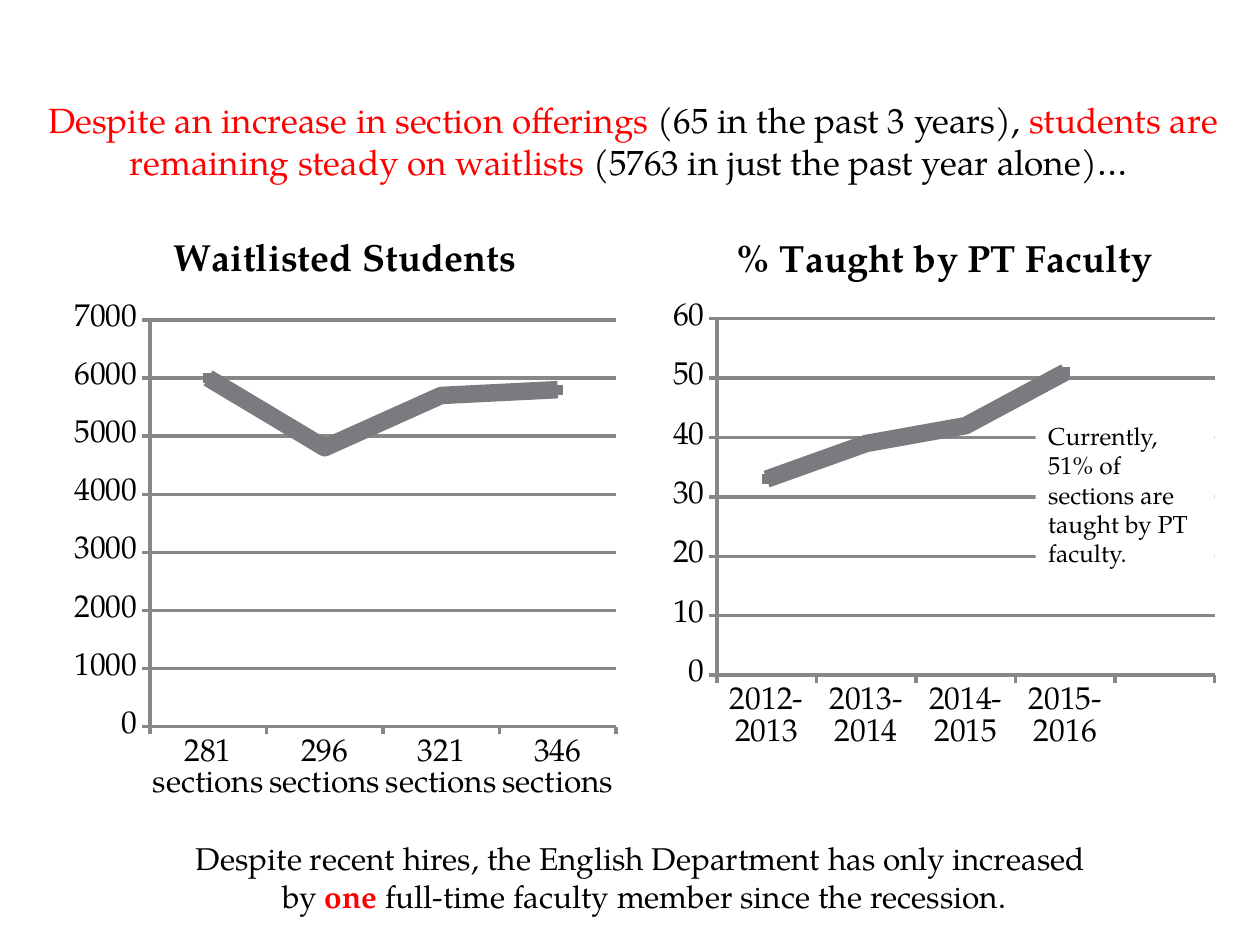
from pptx import Presentation
from pptx.chart.data import CategoryChartData
from pptx.dml.color import RGBColor
from pptx.enum.chart import XL_CHART_TYPE, XL_TICK_MARK
from pptx.enum.shapes import MSO_SHAPE
from pptx.enum.text import MSO_ANCHOR, PP_ALIGN
from pptx.oxml import parse_xml
from pptx.oxml.ns import nsdecls
from pptx.util import Inches, Pt

LINE = XL_CHART_TYPE.LINE
OUTSIDE = XL_TICK_MARK.OUTSIDE
RECT = MSO_SHAPE.RECTANGLE
TOP, BOTTOM = MSO_ANCHOR.TOP, MSO_ANCHOR.BOTTOM
LEFT, CENTER = PP_ALIGN.LEFT, PP_ALIGN.CENTER

BLACK = RGBColor(0x00, 0x00, 0x00)
RED = RGBColor(0xFF, 0x00, 0x00)
WHITE = RGBColor(0xFF, 0xFF, 0xFF)
GRAY = RGBColor(0x79, 0x7B, 0x7E)
GRID = RGBColor(0x87, 0x87, 0x87)
FONT = "TeX Gyre Pagella"

prs = Presentation()
prs.slide_width, prs.slide_height = Inches(10), Inches(7.5)
s = prs.slides.add_slide(prs.slide_layouts[6])


def write(sp, paragraphs, size, align, anchor=TOP):
    """Fill a shape with paragraphs of (text, colour, bold) runs."""
    tf = sp.text_frame
    tf.word_wrap = True
    tf.vertical_anchor = anchor
    for i, runs in enumerate(paragraphs):
        p = tf.paragraphs[0] if i == 0 else tf.add_paragraph()
        p.alignment = align
        p.font.name, p.font.size = FONT, Pt(size)
        for text, color, bold in runs:
            r = p.add_run()
            r.text = text
            r.font.color.rgb = color
            r.font.bold = bold


# Headline
sp = s.shapes.add_textbox(Inches(0.19), Inches(0.1), Inches(9.67), Inches(1.4))
write(sp, [[("Despite an increase in section offerings", RED, False),
            (" (65 in the past 3 years), ", BLACK, False),
            ("students are remaining steady on waitlists", RED, False),
            (" (5763 in just the past year alone)… ", BLACK, False)]],
      20, CENTER, BOTTOM)

# Line charts: title, categories, values, axis maximum and step,
# chart box and plot area (left, top, width, height in inches)
charts = [
    ("Waitlisted Students",
     ["281 sections", "296 sections", "321 sections", "346 sections"],
     [6000, 4800, 5700, 5800], 7000, 1000,
     (0.5, 1.7, 4.48, 4.77), (1.19, 2.54, 3.7, 3.23)),
    ("% Taught by PT Faculty",
     ["2012-2013", "2013-2014", "2014-2015", "2015-2016", ""],
     [33, 39, 42, 51, None], 60, 10,
     (5.26, 1.71, 4.48, 4.34), (5.69, 2.53, 3.95, 2.83)),
]
for title, cats, values, top, step, box, plot_box in charts:
    data = CategoryChartData()
    data.categories = cats
    data.add_series(title, values)
    chart = s.shapes.add_chart(LINE, *map(Inches, box), data).chart
    chart.has_legend = False
    chart.font.name, chart.font.size = FONT, Pt(18)
    chart.font.color.rgb = BLACK

    chart.has_title = True
    p = chart.chart_title.text_frame.paragraphs[0]
    p.text = title
    p.font.name, p.font.size, p.font.bold = FONT, Pt(21.6), True
    p.font.color.rgb = BLACK
    chart.chart_title.include_in_layout = False

    line = chart.plots[0].series[0]
    line.smooth = False
    line.marker.style = None
    line.format.line.width = Pt(10)
    line.format.line.color.rgb = GRAY

    axis = chart.value_axis
    axis.minimum_scale, axis.maximum_scale, axis.major_unit = 0, top, step
    axis.has_major_gridlines = True
    axis.tick_labels.number_format = "General"
    axis.tick_labels.number_format_is_linked = False
    for fmt in (axis.format, axis.major_gridlines.format,
                chart.category_axis.format):
        fmt.line.width = Pt(2)
        fmt.line.color.rgb = GRID
    for ax in (axis, chart.category_axis):
        ax.major_tick_mark = OUTSIDE

    # Fixed inner plot area, as fractions of the chart box
    x, y = [(plot_box[i] - box[i]) / box[i + 2] for i in (0, 1)]
    w, h = [plot_box[i] / box[i] for i in (2, 3)]
    plot_area = chart.plots[0]._element.getparent()
    for old in plot_area.findall("{*}layout"):
        plot_area.remove(old)
    plot_area.insert(0, parse_xml(
        f'<c:layout {nsdecls("c")}><c:manualLayout>'
        '<c:layoutTarget val="inner"/>'
        '<c:xMode val="edge"/><c:yMode val="edge"/>'
        f'<c:x val="{x:.3f}"/><c:y val="{y:.3f}"/>'
        f'<c:w val="{w:.3f}"/><c:h val="{h:.3f}"/>'
        '</c:manualLayout></c:layout>'))

# Closing statement
sp = s.shapes.add_textbox(Inches(0.59), Inches(6.61), Inches(9.05), Inches(0.71))
write(sp, [[("Despite recent hires, the English Department has only increased ",
             BLACK, False)],
           [("by ", BLACK, False), ("one ", RED, True),
            ("full-time faculty member since the recession.", BLACK, False)]],
      18, CENTER)

# Note over the right chart
sp = s.shapes.add_shape(RECT, Inches(8.22), Inches(3.29), Inches(1.42), Inches(1.28))
sp.shadow.inherit = False
sp.fill.solid()
sp.fill.fore_color.rgb = WHITE
sp.line.fill.background()
write(sp, [[("Currently, 51% of sections are taught by PT faculty.", BLACK, False)]],
      14, LEFT)

prs.save("out.pptx")
